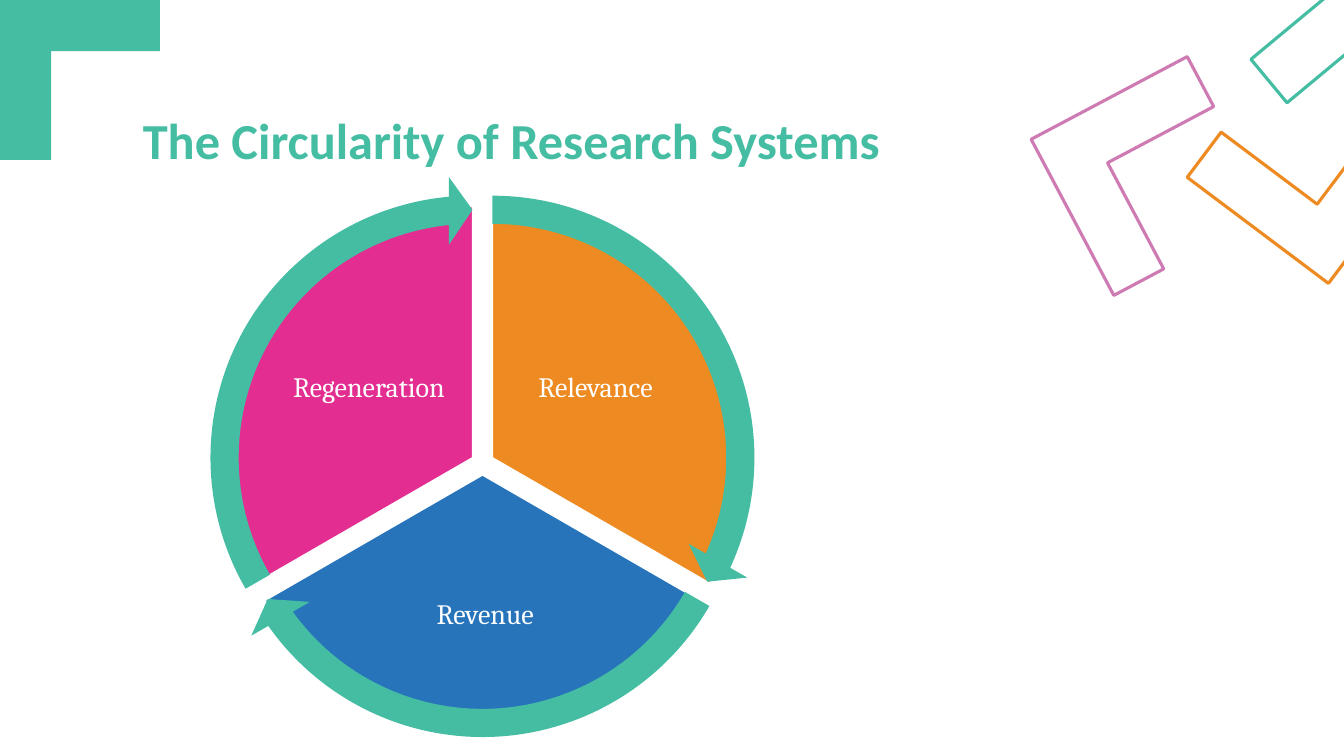
from dataclasses import dataclass
from math import cos, radians, sin

from pptx import Presentation
from pptx.dml.color import RGBColor
from pptx.enum.shapes import MSO_SHAPE
from pptx.enum.text import MSO_ANCHOR, MSO_AUTO_SIZE, PP_ALIGN
from pptx.util import Cm, Pt


@dataclass(frozen=True)
class Theme:
    green: str = "44BDA3"
    orange: str = "EE8A22"
    blue: str = "2874BB"
    pink: str = "E32D91"
    mauve: str = "CF7BB3"
    white: str = "FFFFFF"
    head_font: str = "Calibri"
    body_font: str = "Cambria"
    head_size: int = 36
    body_size: int = 20


THEME = Theme()
HUB = (12.16, 11.68)
GAP = 0.29
PIE_SIZE = 12.65
RING_SIZE = 14.2
HEAD_TURN = 5.46


def paint(shape, fill=None, line=None, width=1):
    shape.shadow.inherit = False
    if fill:
        shape.fill.solid()
        shape.fill.fore_color.rgb = RGBColor.from_string(fill)
    else:
        shape.fill.background()
    if line:
        shape.line.color.rgb = RGBColor.from_string(line)
        shape.line.width = Pt(width)
    else:
        shape.line.fill.background()


def write(shape, text, *, font, size, color, bold=False, align=PP_ALIGN.LEFT,
          anchor=MSO_ANCHOR.TOP, inset=(0.25, 0.13), spacing=1.0):
    frame = shape.text_frame
    frame.word_wrap = True
    frame.auto_size = MSO_AUTO_SIZE.NONE
    frame.vertical_anchor = anchor
    frame.margin_left = frame.margin_right = Cm(inset[0])
    frame.margin_top = frame.margin_bottom = Cm(inset[1])
    par = frame.paragraphs[0]
    par.text = text
    par.alignment = align
    par.line_spacing = spacing
    par.space_before = Pt(0)
    par.font.name = font
    par.font.size = Pt(size)
    par.font.bold = bold
    par.font.color.rgb = RGBColor.from_string(color)


def add_title(slide, text):
    title = slide.shapes.title
    title.left, title.top = Cm(3.35), Cm(2.62)
    title.width, title.height = Cm(29.1), Cm(2.24)
    write(title, text, font=THEME.head_font, size=THEME.head_size,
          color=THEME.green, bold=True)


def add_corner(slide, left, top, size, turn=0, **look):
    """Draw an L with its elbow at the top left, then rotate it."""
    full, arm = Cm(size), Cm(0.32 * size)
    pen = slide.shapes.build_freeform(0, 0)
    pen.add_line_segments([(full, 0), (full, arm), (arm, arm),
                           (arm, full), (0, full)])
    shape = pen.convert_to_shape(Cm(left), Cm(top))
    shape.rotation = turn
    paint(shape, **look)


def add_round(slide, kind, size, mid, values, **look):
    """Centre a round preset shape on the bisector of its sector."""
    x = HUB[0] + GAP * cos(radians(mid)) - size / 2
    y = HUB[1] + GAP * sin(radians(mid)) - size / 2
    shape = slide.shapes.add_shape(kind, Cm(x), Cm(y), Cm(size), Cm(size))
    for i, value in enumerate(values):
        shape.adjustments[i] = value
    paint(shape, **look)


def unit(angle):
    """Turn degrees into the scale of the adjustment values."""
    return angle % 360 * 0.6


def add_label(slide, text, box):
    shape = slide.shapes.add_textbox(*map(Cm, box))
    write(shape, text, font=THEME.body_font, size=THEME.body_size,
          color=THEME.white, align=PP_ALIGN.CENTER,
          anchor=MSO_ANCHOR.MIDDLE, inset=(0.08, 0.08), spacing=0.9)


def add_wheel(slide, parts):
    starts = [270 + i * 360 / len(parts) for i in range(len(parts))]
    sweep = 360 / len(parts)
    for start, (text, color, box) in zip(starts, parts):
        add_round(slide, MSO_SHAPE.PIE, PIE_SIZE, start + sweep / 2,
                  (unit(start), unit(start + sweep)),
                  fill=color, line=THEME.white)
        add_label(slide, text, box)
    for start in starts:
        add_round(slide, MSO_SHAPE.CIRCULAR_ARROW, RING_SIZE,
                  start + sweep / 2,
                  (0.05, unit(HEAD_TURN), unit(start + sweep - HEAD_TURN),
                   unit(start), 0.06), fill=THEME.green)


def main():
    deck = Presentation()
    deck.slide_width, deck.slide_height = Cm(33.87), Cm(19.05)
    slide = deck.slides.add_slide(deck.slide_layouts[5])
    add_corner(slide, 0, 0, 4.03, fill=THEME.green)
    add_title(slide, "The Circularity of Research Systems")
    for left, top, turn, color in (
        (30.5, -2.77, 140.3, THEME.green),
        (30.81, 1.8, 216.9, THEME.orange),
        (26.77, 2.21, 332.1, THEME.mauve),
    ):
        add_corner(slide, left, top, 4.45, turn, line=color, width=2.25)
    add_wheel(slide, (
        ("Relevance", THEME.orange, (12.75, 7.9, 4.52, 3.76)),
        ("Revenue", THEME.blue, (8.84, 13.87, 6.78, 3.3)),
        ("Regeneration", THEME.pink, (7.04, 7.9, 4.52, 3.76)),
    ))
    deck.save("out.pptx")


if __name__ == "__main__":
    main()
